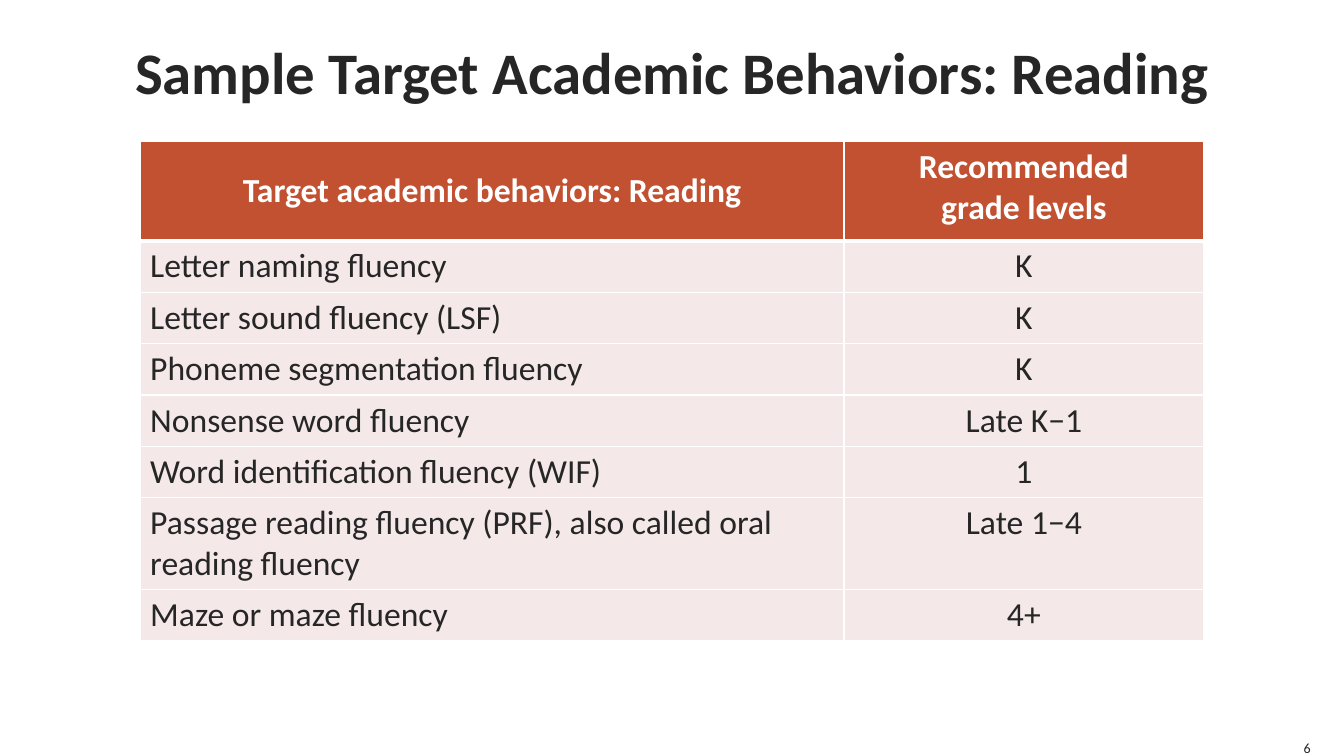
from lxml.etree import SubElement
from pptx import Presentation
from pptx.dml.color import RGBColor
from pptx.enum.text import MSO_ANCHOR, MSO_AUTO_SIZE, PP_ALIGN
from pptx.oxml.ns import qn
from pptx.util import Inches, Pt

INK, WHITE, RUST, BLUSH = "262626", "FFFFFF", "C25131", "F4E9E8"


def write(frame, text, size, color, bold, align):
    """Fill a text frame, one paragraph for each line of text."""
    frame.text = text
    for paragraph in frame.paragraphs:
        paragraph.alignment = align
        font_format = {"name": "Calibri", "size": Pt(size), "bold": bold}
        for run in paragraph.runs:
            for attribute, value in font_format.items():
                setattr(run.font, attribute, value)
            run.font.color.rgb = RGBColor.from_string(color)


def add_cell_border(cell, side, width):
    line = SubElement(cell._tc.get_or_add_tcPr(), qn(f"a:{side}"), w=str(Pt(width)))
    SubElement(SubElement(line, qn("a:solidFill")), qn("a:srgbClr"), val=WHITE)


presentation = Presentation()
presentation.slide_width = Inches(13.33)
presentation.slide_height = Inches(7.5)
slide = presentation.slides.add_slide(presentation.slide_layouts[6])

# Title and slide number
labels = [
    ("Sample Target Academic Behaviors: Reading", (0.5, 0, 12.33, 1.4),
     42, True, PP_ALIGN.CENTER, MSO_ANCHOR.MIDDLE, True, MSO_AUTO_SIZE.NONE),
    ("6", (12.83, 7.33, 0.17, 0.17),
     10, False, PP_ALIGN.RIGHT, MSO_ANCHOR.BOTTOM, False, MSO_AUTO_SIZE.SHAPE_TO_FIT_TEXT),
]
for text, place, size, bold, align, anchor, wrap, fit in labels:
    frame = slide.shapes.add_textbox(*map(Inches, place)).text_frame
    frame_format = {
        "margin_left": 0, "margin_top": 0, "margin_right": 0, "margin_bottom": 0,
        "vertical_anchor": anchor, "word_wrap": wrap, "auto_size": fit,
    }
    for attribute, value in frame_format.items():
        setattr(frame, attribute, value)
    write(frame, text, size, INK, bold, align)

# Behaviors and their grade levels
behaviors = [
    ("Target academic behaviors: Reading", "Recommended\ngrade levels"),
    ("Letter naming fluency", "K"),
    ("Letter sound fluency (LSF)", "K"),
    ("Phoneme segmentation fluency", "K"),
    ("Nonsense word fluency", "Late K−1"),
    ("Word identification fluency (WIF)", "1"),
    ("Passage reading fluency (PRF), also called oral reading fluency", "Late 1−4"),
    ("Maze or maze fluency", "4+"),
]
column_widths = [6.98, 3.57]
row_heights = [0.99] + [0.51] * 5 + [0.91, 0.51]

table = slide.shapes.add_table(
    len(behaviors), len(column_widths), Inches(1.39), Inches(1.4),
    Inches(sum(column_widths)), Inches(sum(row_heights))).table
for column, width in zip(table.columns, column_widths):
    column.width = Inches(width)

for row_index, (row, entries) in enumerate(zip(table.rows, behaviors)):
    row.height = Inches(row_heights[row_index])
    is_header = row_index == 0
    for column_index, entry in enumerate(entries):
        cell = row.cells[column_index]
        centered = is_header or column_index == 1
        write(cell.text_frame, entry, 24, WHITE if is_header else INK, is_header,
              PP_ALIGN.CENTER if centered else PP_ALIGN.LEFT)
        if is_header and column_index == 0:
            cell.vertical_anchor = MSO_ANCHOR.MIDDLE
        border_widths = {"lnL": 1, "lnR": 1, "lnT": 3 if row_index == 1 else 1,
                         "lnB": 3 if is_header else 1}
        for side, width in border_widths.items():
            add_cell_border(cell, side, width)
        cell.fill.solid()
        cell.fill.fore_color.rgb = RGBColor.from_string(RUST if is_header else BLUSH)

presentation.save("out.pptx")
